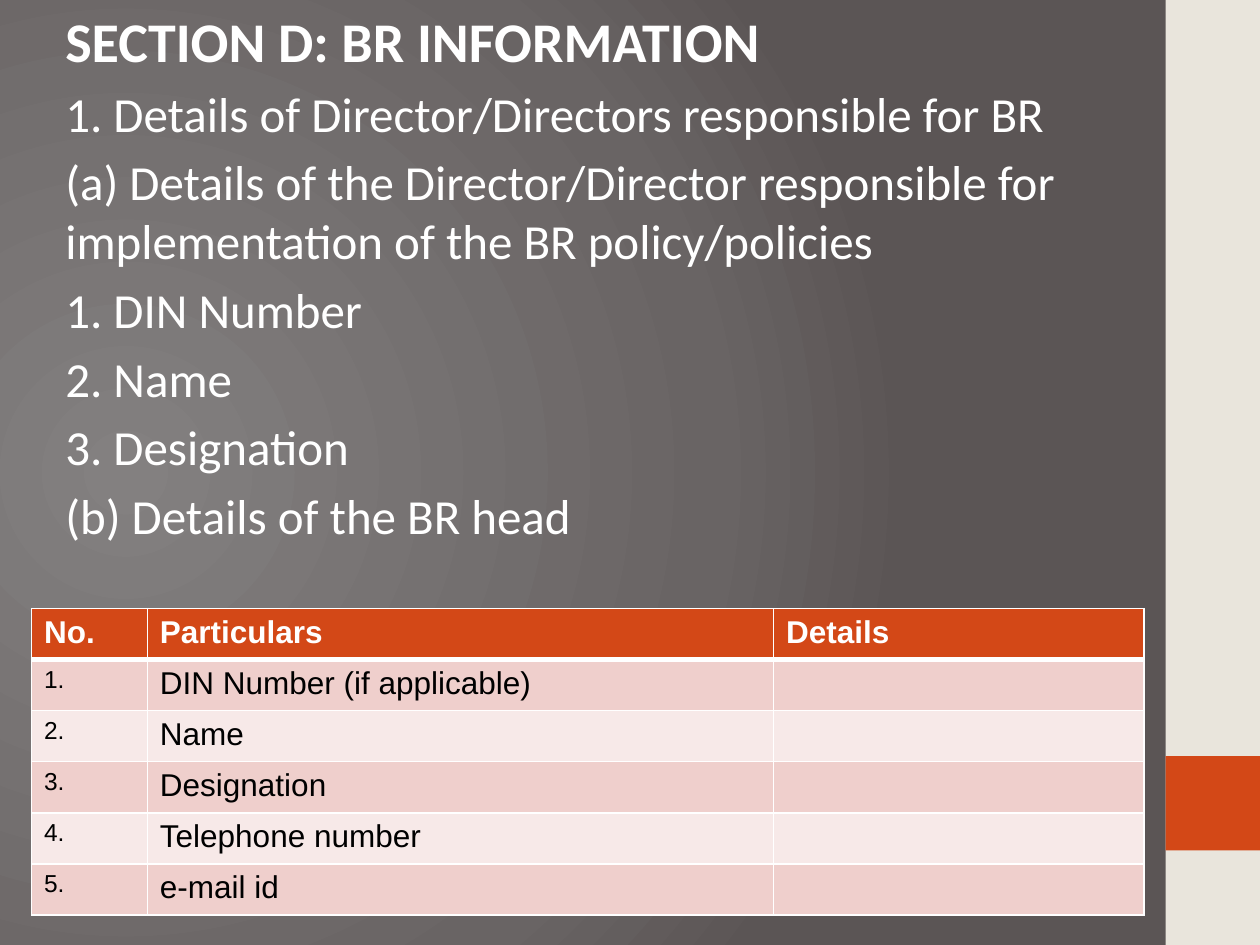
"""Build the BR information slide: heading text, side bars and a details table."""
from typing import NamedTuple

from pptx import Presentation
from pptx import util as u
from pptx.dml.color import RGBColor
from pptx.enum import shapes, text
from pptx.oxml import parse_xml
from pptx.oxml.ns import qn

WHITE = RGBColor(0xFF, 0xFF, 0xFF)
BLACK = RGBColor(0, 0, 0)
CREAM = RGBColor(0xE9, 0xE5, 0xDC)
RUST = RGBColor(0xD3, 0x48, 0x17)
ROSE = RGBColor(0xEF, 0xCF, 0xCC)
BLUSH = RGBColor(0xF7, 0xE9, 0xE8)
SHADES = [(0, RGBColor(0x83, 0x80, 0x80)), (75, RGBColor(0x69, 0x64, 0x64)),
          (100, RGBColor(0x5B, 0x55, 0x55))]
NS = 'xmlns:a="http://schemas.openxmlformats.org/drawingml/2006/main"'
COLS, ROWS = 40, 30


class Box(NamedTuple):
    """A rectangle in grid columns and rows."""
    left: float
    top: float
    width: float
    height: float


class Bar(NamedTuple):
    """A filled side bar."""
    box: Box
    fill: RGBColor


class Line(NamedTuple):
    """A line of heading text."""
    words: str
    size: int = 28
    bold: bool = False


BARS = [Bar(Box(37, 0, 3, 30), CREAM), Bar(Box(37, 24, 3, 3), RUST)]
LINES = [
    Line("SECTION D: BR INFORMATION", 32, True),
    Line("1. Details of Director/Directors responsible for BR"),
    Line("(a) Details of the Director/Director responsible for "
         "implementation of the BR policy/policies"),
    Line("1. DIN Number"),
    Line("2. Name"),
    Line("3. Designation"),
    Line("(b) Details of the BR head"),
]
HEAD = ["No.", "Particulars", "Details"]
ITEMS = ["DIN Number (if applicable)", "Name", "Designation",
         "Telephone number", "e-mail id"]
WIDTHS = [3.68, 19.88, 11.76]
STEP = 1.62

deck = Presentation()
deck.slide_width, deck.slide_height = u.Inches(10), u.Inches(7.5)


def across(cols: float) -> int:
    """Turn grid columns into a length."""
    return round(deck.slide_width * cols / COLS)


def down(rows: float) -> int:
    """Turn grid rows into a length."""
    return round(deck.slide_height * rows / ROWS)


def place(box: Box) -> tuple[int, int, int, int]:
    """Give a box as slide lengths."""
    return across(box.left), down(box.top), across(box.width), down(box.height)


def style(para, face: str, size: int, tint: RGBColor, bold: bool) -> None:
    """Format every run of a paragraph."""
    for run in para.runs:
        run.font.name, run.font.size, run.font.bold = face, u.Pt(size), bold
        run.font.color.rgb = tint


def shade(slide) -> None:
    """Give the slide its round gradient background."""
    fill = slide.background.fill
    fill.solid()
    old = slide.background._cSld.bg.bgPr.find(qn("a:solidFill"))
    stops = "".join(f'<a:gs pos="{at * 1000}"><a:srgbClr val="{tint}"/></a:gs>'
                    for at, tint in SHADES)
    new = parse_xml(f'<a:gradFill {NS} rotWithShape="1"><a:gsLst>{stops}</a:gsLst>'
                    '<a:path path="circle"><a:fillToRect l="20000" t="50000" '
                    'r="100000" b="50000"/></a:path></a:gradFill>')
    old.getparent().replace(old, new)


def draw_bar(slide, bar: Bar) -> None:
    """Draw one side bar."""
    shape = slide.shapes.add_shape(shapes.MSO_SHAPE.RECTANGLE, *place(bar.box))
    shape.shadow.inherit = False
    shape.fill.solid()
    shape.fill.fore_color.rgb = bar.fill
    shape.line.fill.background()


def write(slide, box: Box, lines: list[Line]) -> None:
    """Write the heading lines."""
    frame = slide.shapes.add_textbox(*place(box)).text_frame
    frame.word_wrap = True
    frame.auto_size = text.MSO_AUTO_SIZE.NONE
    frame.text = "\n".join(line.words for line in lines)
    for para, line in zip(frame.paragraphs, lines):
        para.space_before = u.Pt(line.size * 0.2)
        style(para, "Calibri", line.size, WHITE, line.bold)


def edge(cell, base: int, roof: int) -> None:
    """Rule a cell in white, with its own lower and upper weights."""
    props = cell._tc.get_or_add_tcPr()
    sides = {"lnL": 1, "lnR": 1, "lnT": roof, "lnB": base}
    for spot, (tag, size) in enumerate(sides.items()):
        props.insert(spot, parse_xml(
            f'<a:{tag} {NS} w="{u.Pt(size)}"><a:solidFill>'
            f'<a:srgbClr val="{WHITE}"/></a:solidFill></a:{tag}>'))


def draw_table(slide, box: Box) -> None:
    """Draw the details table."""
    rows = [HEAD] + [[f"{num}.", item, ""] for num, item in enumerate(ITEMS, 1)]
    table = slide.shapes.add_table(len(rows), len(HEAD), *place(box)).table
    for col, width in zip(table.columns, WIDTHS):
        col.width = across(width)
    for r, row in enumerate(rows):
        table.rows[r].height = down(STEP)
        top = r == 0
        for c, words in enumerate(row):
            cell = table.cell(r, c)
            cell.text_frame.text = words
            size = 14 if c == 0 and not top else 18
            style(cell.text_frame.paragraphs[0], "Arial", size,
                  WHITE if top else BLACK, top)
            cell.fill.solid()
            cell.fill.fore_color.rgb = RUST if top else ROSE if r % 2 else BLUSH
            edge(cell, 3 if top else 1, 3 if r == 1 else 1)


def main() -> None:
    """Build and save the slide."""
    slide = deck.slides.add_slide(deck.slide_layouts[6])
    shade(slide)
    for bar in BARS:
        draw_bar(slide, bar)
    write(slide, Box(1.68, 0, 35.32, 28.32), LINES)
    draw_table(slide, Box(1, 19.32, sum(WIDTHS), STEP * (len(ITEMS) + 1)))
    deck.save("out.pptx")


if __name__ == "__main__":
    main()
